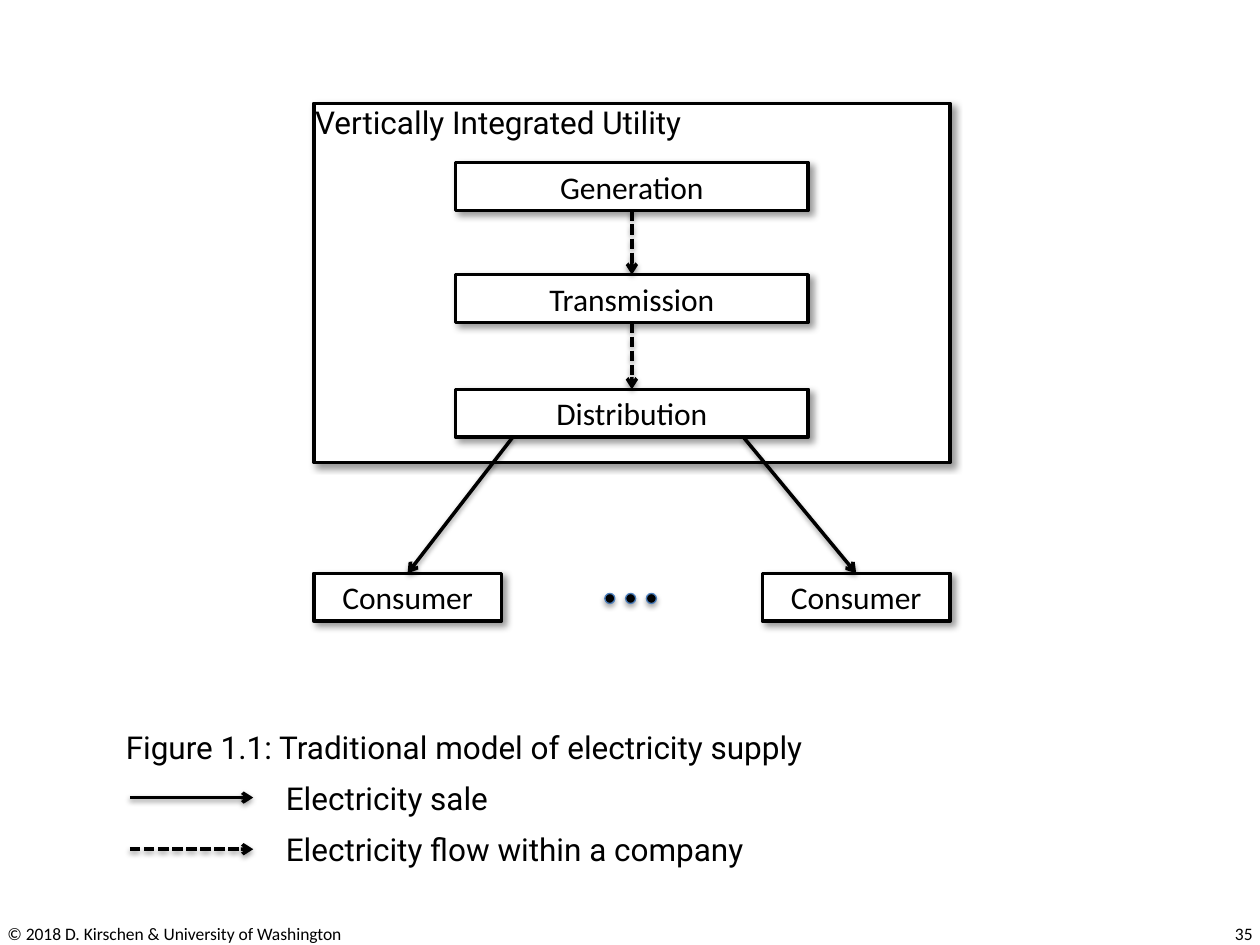
from collections import namedtuple
from dataclasses import dataclass
from itertools import pairwise

from lxml.etree import SubElement
from pptx import Presentation
from pptx.dml.color import RGBColor
from pptx.enum.dml import MSO_LINE_DASH_STYLE as Dash
from pptx.enum.shapes import MSO_CONNECTOR as Connector, MSO_SHAPE as Shape
from pptx.enum.text import MSO_ANCHOR as Anchor, PP_ALIGN as Align
from pptx.oxml.ns import qn
from pptx.util import Inches, Pt

Box = namedtuple("Box", "left top width height")
Shadow = namedtuple("Shadow", "alpha blur distance angle")


@dataclass(frozen=True)
class Theme:
    """Colours, fonts, sizes and shadows of the slide."""
    ink: RGBColor = RGBColor(0, 0, 0)
    paper: RGBColor = RGBColor(255, 255, 255)
    dot_edge: RGBColor = RGBColor(0x4B, 0x7E, 0xBC)
    label_font: str = "Calibri"
    caption_font: str = "Roboto"
    body_size: Pt = Pt(18)
    footer_size: Pt = Pt(10)
    stroke: Pt = Pt(2)
    dot_stroke: Pt = Pt(0.75)
    block_shadow: Shadow = Shadow(40, 4, 3, 45)
    dot_shadow: Shadow = Shadow(35, 3.1, 1.8, 90)
    arrow_shadow: Shadow = Shadow(38, 3.1, 1.6, 90)


THEME = Theme()


def assign(target, values):
    """Set every attribute named in a dict of format values."""
    for name, value in values.items():
        setattr(target, name, value)


def inches(box):
    """Turn a box of numbers into slide lengths."""
    return [Inches(value) for value in box]


def cast_shadow(part, shadow):
    """Give a shape or connector an outer shadow."""
    effects = SubElement(part._element.spPr, qn("a:effectLst"))
    outer = SubElement(effects, qn("a:outerShdw"), blurRad=str(Pt(shadow.blur)),
                       dist=str(Pt(shadow.distance)), dir=str(shadow.angle * 60000),
                       rotWithShape="0")
    colour = SubElement(outer, qn("a:srgbClr"), val=str(THEME.ink))
    SubElement(colour, qn("a:alpha"), val=str(shadow.alpha * 1000))


def write(frame, text, font, size=THEME.body_size, align=Align.LEFT,
          anchor=Anchor.TOP, wrap=True):
    """Write one formatted line into a text frame."""
    assign(frame, {"word_wrap": wrap, "vertical_anchor": anchor})
    para = frame.paragraphs[0]
    para.alignment = align
    span = para.add_run()
    span.text = text
    assign(span.font, {"name": font, "size": size})
    span.font.color.rgb = THEME.ink


def add_text(page, box, text, font, **style):
    """Add a text box."""
    frame = page.shapes.add_textbox(*inches(box)).text_frame
    write(frame, text, font, **style)


def add_solid(page, kind, box, fill, edge, stroke, shadow):
    """Add a filled, outlined and shadowed preset shape."""
    shape = page.shapes.add_shape(kind, *inches(box))
    shape.fill.solid()
    shape.fill.fore_color.rgb = fill
    shape.line.color.rgb = edge
    shape.line.width = stroke
    cast_shadow(shape, shadow)
    return shape


def add_block(page, box, text=None):
    """Add a white block, with a centred label if one is given."""
    block = add_solid(page, Shape.RECTANGLE, box, THEME.paper, THEME.ink,
                      THEME.stroke, THEME.block_shadow)
    if text:
        write(block.text_frame, text, THEME.label_font,
              align=Align.CENTER, anchor=Anchor.MIDDLE)
    return block


def add_arrow(page, start, end, dashed=False):
    """Add a straight arrow between two points."""
    arrow = page.shapes.add_connector(Connector.STRAIGHT, *inches(start + end))
    arrow.line.color.rgb = THEME.ink
    arrow.line.width = THEME.stroke
    if dashed:
        arrow.line.dash_style = Dash.SQUARE_DOT
    SubElement(arrow.line._get_or_add_ln(), qn("a:tailEnd"), type="arrow")
    cast_shadow(arrow, THEME.arrow_shadow)
    return arrow


def place_utility(page, box):
    """Place the utility frame with its chain of stages."""
    add_block(page, box)
    add_text(page, Box(box.left - 0.09, box.top - 0.05, 3.11, 0.4),
             "Vertically Integrated Utility", THEME.caption_font,
             align=Align.CENTER, wrap=False)
    width, height = 2.8, 0.38
    left = box.left + (box.width - width) / 2
    stages = [
        add_block(page, Box(left, box.top + drop, width, height), name)
        for name, drop in (("Generation", 0.47), ("Transmission", 1.36),
                           ("Distribution", 2.27))
    ]
    for upper, lower in pairwise(stages):
        arrow = add_arrow(page, (left, box.top), (left, box.top), dashed=True)
        arrow.begin_connect(upper, 2)
        arrow.end_connect(lower, 0)


def place_consumers(page, box, sources):
    """Place the consumers, the dots between them and their supply arrows."""
    width = 1.49
    for left, source in zip((box.left, box.left + box.width - width), sources):
        consumer = add_block(page, Box(left, box.top, width, box.height), "Consumer")
        arrow = add_arrow(page, source, (left + width / 2, box.top))
        arrow.end_connect(consumer, 0)
    size, pitch = 0.08, 0.165
    middle = box.left + (box.width - size) / 2 - 0.01
    for step in (-1, 0, 1):
        add_solid(page, Shape.OVAL,
                  Box(middle + step * pitch, box.top + 0.16, size, size),
                  THEME.ink, THEME.dot_edge, THEME.dot_stroke, THEME.dot_shadow)


def place_legend(page, box):
    """Place the figure caption and the key to the arrows."""
    row = 0.4
    add_text(page, Box(box.left, box.top, box.width, row),
             "Figure 1.1: Traditional model of electricity supply",
             THEME.caption_font, wrap=False)
    entries = (("Electricity sale", False), ("Electricity flow within a company", True))
    for index, (text, dashed) in enumerate(entries):
        top = box.top + row + index * 0.41
        add_arrow(page, (box.left + 0.13, top + row / 2),
                  (box.left + 1.11, top + row / 2), dashed)
        add_text(page, Box(box.left + 1.27, top, 4.09, row), text, THEME.caption_font)


def place_footer(page, box):
    """Place the copyright line and the page number."""
    style = {"size": THEME.footer_size, "anchor": Anchor.MIDDLE}
    add_text(page, Box(box.left, box.top, 2.94, box.height),
             "© 2018 D. Kirschen & University of Washington", THEME.label_font, **style)
    width = 2.33
    add_text(page, Box(box.left + box.width - width, box.top, width, box.height),
             "35", THEME.label_font, align=Align.RIGHT, **style)


def main():
    """Build and save the slide."""
    deck = Presentation()
    assign(deck, {"slide_width": Inches(10), "slide_height": Inches(7.5)})
    page = deck.slides.add_slide(deck.slide_layouts[6])
    place_utility(page, Box(2.49, 0.82, 5.05, 2.85))
    place_consumers(page, Box(2.49, 4.55, 5.05, 0.38), ((4.07, 3.47), (5.9, 3.47)))
    place_legend(page, Box(0.9, 5.73, 5.6, 1.21))
    place_footer(page, Box(-0.04, 7.21, 10.08, 0.4))
    deck.save("out.pptx")


if __name__ == "__main__":
    main()
